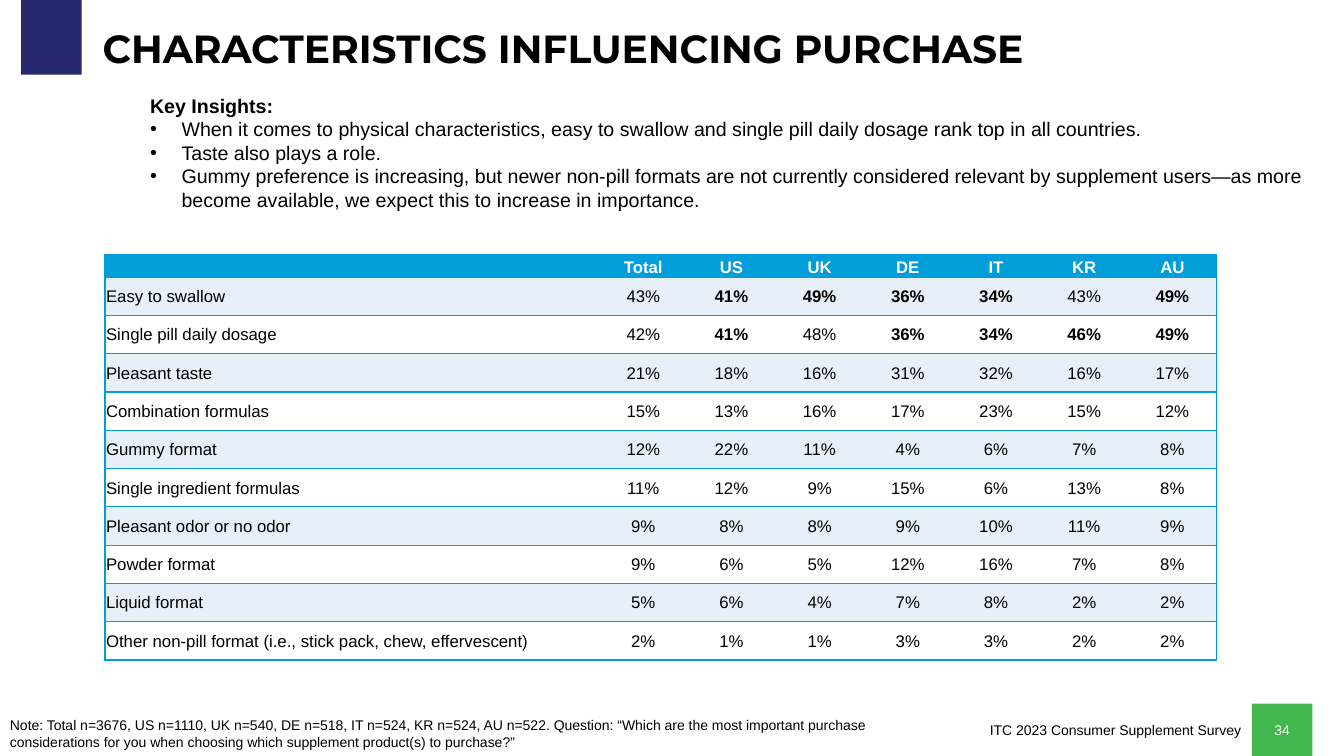
"""Build the slide on characteristics that influence supplement purchase."""
from lxml import etree
from pptx import Presentation
from pptx.dml.color import RGBColor
from pptx.enum.shapes import MSO_SHAPE
from pptx.enum.text import MSO_ANCHOR, PP_ALIGN
from pptx.oxml.ns import qn
from pptx.util import Pt

RECT = MSO_SHAPE.RECTANGLE
TOP, MIDDLE, BOTTOM = MSO_ANCHOR.TOP, MSO_ANCHOR.MIDDLE, MSO_ANCHOR.BOTTOM
LEFT, CENTER, RIGHT = PP_ALIGN.LEFT, PP_ALIGN.CENTER, PP_ALIGN.RIGHT
BLACK, WHITE, NAVY, GREEN = "000000", "FFFFFF", "27276E", "42B74D"
BLUE, PALE = "009DD9", "E7EFF8"

TITLE = "CHARACTERISTICS INFLUENCING PURCHASE"
LEAD = "Key Insights:"
POINTS = [
    "When it comes to physical characteristics, easy to swallow and single pill daily dosage rank top in all countries.",
    "Taste also plays a role.",
    "Gummy preference is increasing, but newer non-pill formats are not currently considered relevant by "
    "supplement users—as more become available, we expect this to increase in importance.",
]
NOTE = ("Note: Total n=3676, US n=1110, UK n=540, DE n=518, IT n=524, KR n=524, AU n=522. "
        "Question: “Which are the most important purchase considerations for you when choosing "
        "which supplement product(s) to purchase?”")
SURVEY = "ITC 2023 Consumer Supplement Survey"
PAGE = "34"
HEADS = ["", "Total", "US", "UK", "DE", "IT", "KR", "AU"]
ROWS = [
    ("Easy to swallow", 43, 41, 49, 36, 34, 43, 49),
    ("Single pill daily dosage", 42, 41, 48, 36, 34, 46, 49),
    ("Pleasant taste", 21, 18, 16, 31, 32, 16, 17),
    ("Combination formulas", 15, 13, 16, 17, 23, 15, 12),
    ("Gummy format", 12, 22, 11, 4, 6, 7, 8),
    ("Single ingredient formulas", 11, 12, 9, 15, 6, 13, 8),
    ("Pleasant odor or no odor", 9, 8, 8, 9, 10, 11, 9),
    ("Powder format", 9, 6, 5, 12, 16, 7, 8),
    ("Liquid format", 5, 6, 4, 7, 8, 2, 2),
    ("Other non-pill format (i.e., stick pack, chew, effervescent)", 2, 1, 1, 3, 3, 2, 2),
]
LABEL_W, VALUE_W = 353, 63
HEAD_H, ROW_H = 16, 27.36


def color(code):
    return RGBColor.from_string(code)


def style(para, size, tint=BLACK, bold=False, align=LEFT, face="Arial"):
    para.alignment = align
    for run in para.runs:
        font = run.font
        font.name, font.size, font.bold = face, Pt(size), bold
        font.color.rgb = color(tint)


def add_text(slide, box, lines, anchor=TOP):
    frame = slide.shapes.add_textbox(*map(Pt, box)).text_frame
    frame.word_wrap = True
    frame.vertical_anchor = anchor
    frame.text = "\n".join(lines)
    return frame.paragraphs


def add_block(slide, box, fill):
    block = slide.shapes.add_shape(RECT, *map(Pt, box))
    block.shadow.inherit = False
    block.fill.solid()
    block.fill.fore_color.rgb = color(fill)
    block.line.fill.background()
    return block


def add_bullet(para):
    props = para._p.get_or_add_pPr()
    props.set("marL", str(Pt(22.5)))
    props.set("indent", str(-Pt(22.5)))
    etree.SubElement(props, qn("a:buFont")).set("typeface", "Arial")
    etree.SubElement(props, qn("a:buChar")).set("char", "•")


def set_edges(cell, drawn):
    props = cell._tc.get_or_add_tcPr()
    for spot, side in enumerate("LRTB"):
        edge = etree.Element(qn(f"a:ln{side}"), w=str(Pt(1)))
        if side in drawn:
            fill = etree.SubElement(edge, qn("a:solidFill"))
            etree.SubElement(fill, qn("a:srgbClr")).set("val", BLUE)
        else:
            etree.SubElement(edge, qn("a:noFill"))
        props.insert(spot, edge)


def fill_cell(cell, text, fill, tint, bold, align, anchor):
    cell.text = text
    cell.margin_left = cell.margin_right = cell.margin_top = Pt(0.75)
    cell.margin_bottom = Pt(0)
    cell.vertical_anchor = anchor
    cell.fill.solid()
    cell.fill.fore_color.rgb = color(fill)
    para = cell.text_frame.paragraphs[0]
    style(para, 12, tint, bold, align)
    if not text:
        para._p.get_or_add_endParaRPr().set("sz", "1200")


def add_grid(slide):
    last = len(HEADS) - 1
    width, height = LABEL_W + VALUE_W * last, HEAD_H + ROW_H * len(ROWS)
    grid = slide.shapes.add_table(len(ROWS) + 1, len(HEADS), Pt(75), Pt(181.9),
                                  Pt(width), Pt(height)).table
    grid.horz_banding = False
    for col, part in enumerate(grid.columns):
        part.width = Pt(VALUE_W if col else LABEL_W)
    for row, part in enumerate(grid.rows):
        part.height = Pt(ROW_H if row else HEAD_H)
    peaks = [max(vals) for vals in list(zip(*ROWS))[1:]]
    for row, vals in enumerate([HEADS] + ROWS):
        for col, val in enumerate(vals):
            cell = grid.cell(row, col)
            align = CENTER if col else LEFT
            if row == 0:
                fill_cell(cell, val, BLUE, WHITE, True, align, BOTTOM)
            else:
                text = f"{val}%" if col else val
                bold = col > 1 and val == peaks[col - 1]
                fill = PALE if row % 2 else WHITE
                fill_cell(cell, text, fill, BLACK, bold, align, MIDDLE)
            set_edges(cell, "TB" + "L" * (col == 0) + "R" * (col == last))


def main():
    deck = Presentation()
    deck.slide_width, deck.slide_height = Pt(960), Pt(540)
    slide = deck.slides.add_slide(deck.slide_layouts[6])

    add_block(slide, (15.1, -3.6, 43.2, 57), NAVY)
    survey = add_text(slide, (570.2, 512, 323.3, 19.4), [SURVEY])
    style(survey[0], 10, align=RIGHT)

    badge = add_block(slide, (894.2, 502.6, 43.2, 37.4), GREEN).text_frame
    badge.text = PAGE
    badge.vertical_anchor = MIDDLE
    style(badge.paragraphs[0], 10, WHITE, align=CENTER)

    title = add_text(slide, (66.2, 18, 803.5, 36), [TITLE], MIDDLE)[0]
    title.line_spacing = 0.9
    style(title, 28, bold=True, face="Montserrat")

    style(add_text(slide, (0, 508.3, 632.2, 31.7), [NOTE])[0], 10)

    lead, *points = add_text(slide, (100.1, 63.4, 852.5, 92.2), [LEAD] + POINTS)
    style(lead, 14, bold=True)
    for para in points:
        add_bullet(para)
        style(para, 14)

    add_grid(slide)
    deck.save("out.pptx")


if __name__ == "__main__":
    main()
